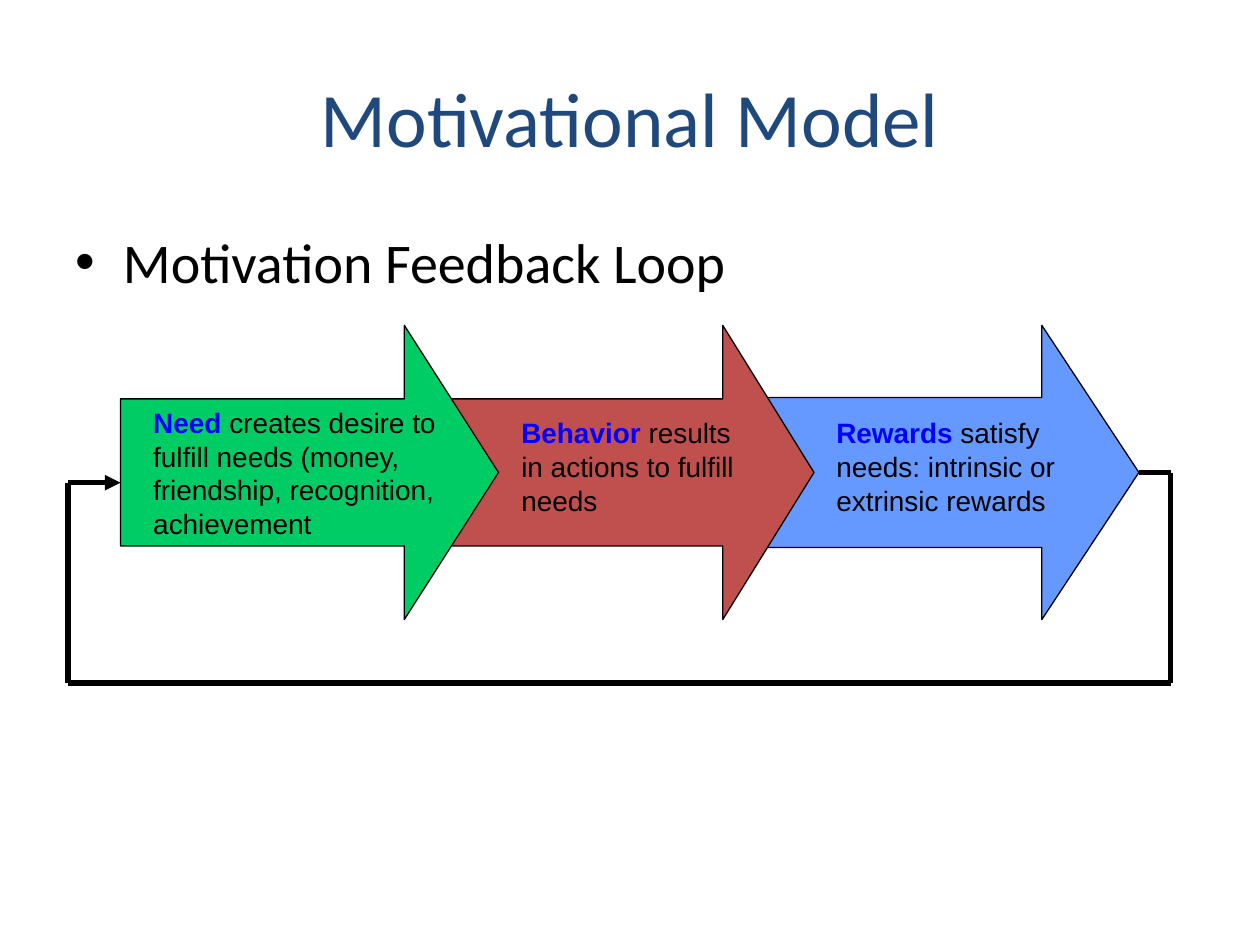
from dataclasses import dataclass

from lxml import etree
from pptx import Presentation
from pptx.dml.color import RGBColor
from pptx.enum.shapes import MSO_CONNECTOR, MSO_SHAPE
from pptx.enum.text import MSO_ANCHOR, MSO_AUTO_SIZE, PP_ALIGN
from pptx.oxml.ns import qn
from pptx.util import Cm, Pt

ARROW = MSO_SHAPE.RIGHT_ARROW
LINE = MSO_CONNECTOR.STRAIGHT
MIDDLE = MSO_ANCHOR.MIDDLE
GROW = MSO_AUTO_SIZE.SHAPE_TO_FIT_TEXT
CENTER, LEFT = PP_ALIGN.CENTER, PP_ALIGN.LEFT


@dataclass(frozen=True)
class Theme:
    title: str = "1F497D"
    ink: str = "000000"
    key: str = "0000FF"
    need: str = "00CC66"
    act: str = "C0504D"
    gain: str = "6699FF"
    head: str = "Calibri"
    body: str = "Arial"
    big: int = 44
    mid: int = 32
    small: int = 16
    thin: float = 0.75
    thick: int = 3


theme = Theme()


def write(para, text, *, font, size, color, bold=False, align=LEFT):
    para.alignment = align
    run = para.add_run()
    run.text = text
    run.font.name = font
    run.font.size = Pt(size)
    run.font.bold = bold
    run.font.color.rgb = RGBColor.from_string(color)


def place(shape, left, top, width, height):
    shape.left, shape.top = Cm(left), Cm(top)
    shape.width, shape.height = Cm(width), Cm(height)


deck = Presentation()
deck.slide_width, deck.slide_height = Cm(25.4), Cm(19.05)
slide = deck.slides.add_slide(deck.slide_layouts[1])
shapes = slide.shapes

# Title and list
title, body = slide.placeholders
place(title, 1.27, 0.76, 22.86, 3.18)
title.text_frame.vertical_anchor = MIDDLE
write(title.text_frame.paragraphs[0], "Motivational Model", font=theme.head,
      size=theme.big, color=theme.title, align=CENTER)
place(body, 1.27, 4.45, 22.86, 12.57)
write(body.text_frame.paragraphs[0], "Motivation Feedback Loop",
      font=theme.head, size=theme.mid, color=theme.ink)

# Arrows, the last one at the back: left, width, shaft, head, fill
top, tall = 6.56, 5.93
arrows = [
    (15.13, 7.83, 0.51, 0.33, theme.gain),
    (8.99, 7.42, 0.5, 0.31, theme.act),
    (2.43, 7.62, 0.5, 0.32, theme.need),
]
for left, width, shaft, head, fill in arrows:
    arrow = shapes.add_shape(ARROW, Cm(left), Cm(top), Cm(width), Cm(tall))
    arrow.adjustments[0], arrow.adjustments[1] = shaft, head
    arrow.shadow.inherit = False
    arrow.fill.solid()
    arrow.fill.fore_color.rgb = RGBColor.from_string(fill)
    arrow.line.color.rgb = RGBColor.from_string(theme.ink)
    arrow.line.width = Pt(theme.thin)

# Labels over the arrows: left, top, width, height, key word, rest
labels = [
    (2.84, 8.05, 6.99, 2.97, "Need",
     " creates desire to fulfill needs (money, friendship, recognition, achievement"),
    (10.26, 8.26, 5.08, 2.29, "Behavior",
     " results in actions to fulfill needs"),
    (16.61, 8.26, 5.08, 2.29, "Rewards",
     " satisfy needs: intrinsic or extrinsic rewards"),
]
for left, high, width, height, key, rest in labels:
    box = shapes.add_textbox(Cm(left), Cm(high), Cm(width), Cm(height))
    frame = box.text_frame
    frame.word_wrap = True
    frame.auto_size = GROW
    para = frame.paragraphs[0]
    write(para, key, font=theme.body, size=theme.small, color=theme.key,
          bold=True)
    write(para, rest, font=theme.body, size=theme.small, color=theme.ink)

# Feedback loop from the last arrow's tip back to the first arrow
path = [(22.96, 9.53), (23.6, 9.53), (23.6, 13.77), (1.37, 13.77),
        (1.37, 9.73), (2.43, 9.73)]
for start, end in zip(path, path[1:]):
    line = shapes.add_connector(LINE, *map(Cm, start + end))
    line.line.color.rgb = RGBColor.from_string(theme.ink)
    line.line.width = Pt(theme.thick)
    etree.SubElement(line._element.spPr, qn("a:effectLst"))
# The last line carries the arrowhead
etree.SubElement(line.line._get_or_add_ln(), qn("a:tailEnd"), type="triangle")

deck.save("out.pptx")
